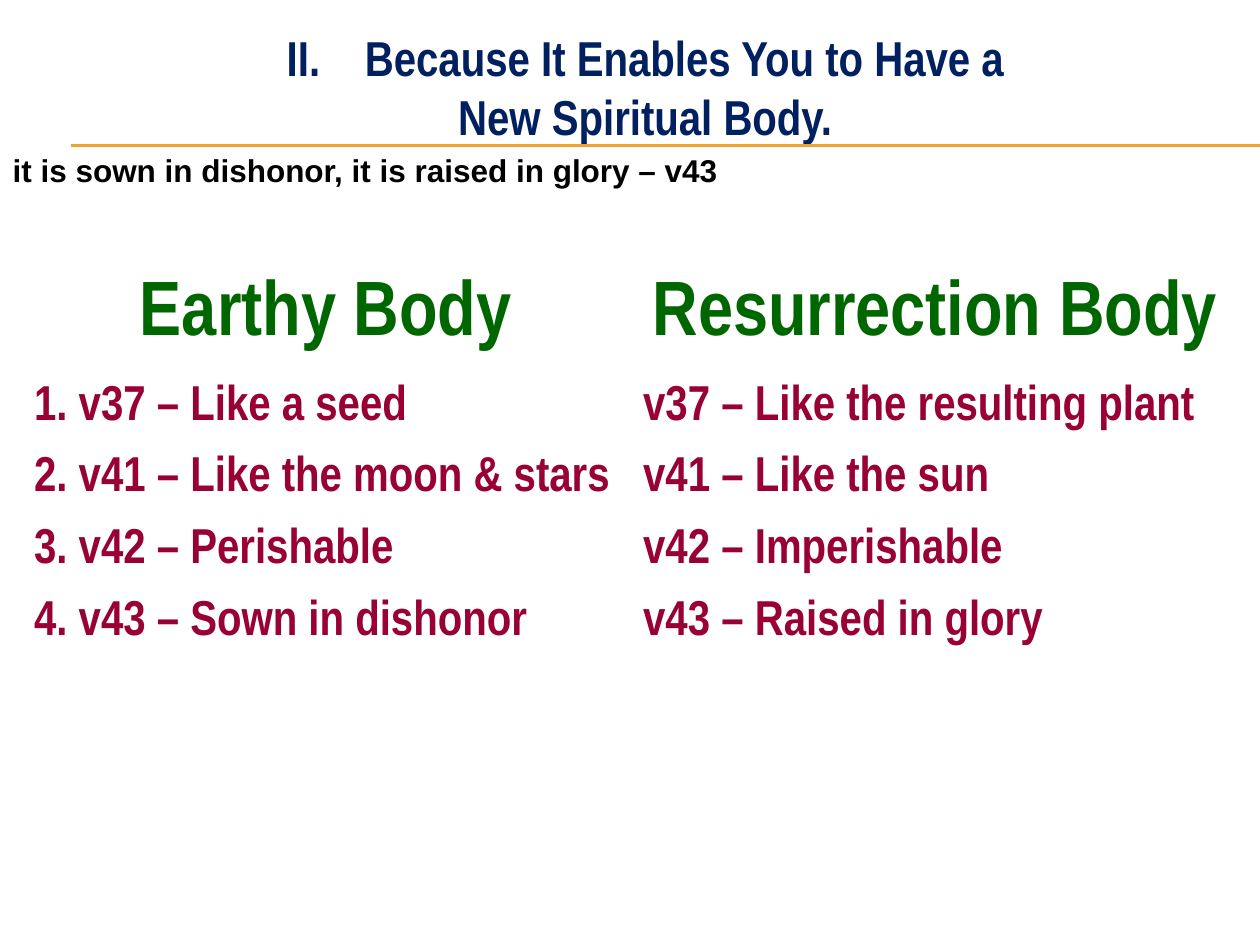
from lxml.etree import SubElement
from pptx import Presentation
from pptx.dml.color import RGBColor
from pptx.enum.shapes import MSO_CONNECTOR
from pptx.enum.text import MSO_ANCHOR, MSO_AUTO_SIZE, PP_ALIGN
from pptx.oxml.ns import qn
from pptx.util import Inches, Pt

COLORS = {"title": "002060", "head": "006600", "item": "990033",
          "verse": "000000", "rule": "F0A22E"}
WIDE, HIGH = 10, 7.5
NARROW = "Arial Narrow"
TITLE = ["Because It Enables You to Have a", "New Spiritual Body."]
VERSE = "it is sown in dishonor, it is raised in glory – v43"
BODIES = [
    ("Earthy Body", "Resurrection Body"),
    ("1. v37 – Like a seed", "v37 – Like the resulting plant"),
    ("2. v41 – Like the moon & stars", "v41 – Like the sun"),
    ("3. v42 – Perishable", "v42 – Imperishable"),
    ("4. v43 – Sown in dishonor", "v43 – Raised in glory"),
]


def style(para, size, color, align, font=NARROW):
    para.alignment = align
    for run in para.runs:
        run.font.size = Pt(size)
        run.font.name = font
        run.font.bold = True
        run.font.color.rgb = RGBColor.from_string(COLORS[color])


def add_rule(slide, top):
    line = slide.shapes.add_connector(
        MSO_CONNECTOR.STRAIGHT, Inches(0.56), Inches(top), Inches(WIDE), Inches(top))
    line.line.color.rgb = RGBColor.from_string(COLORS["rule"])
    line.line.width = Pt(0.75)
    SubElement(line._element.spPr, qn("a:effectLst"))


def set_title(slide):
    """Fill the title, with a hanging indent and a Roman number on its first line."""
    title = slide.shapes.title
    title.left, title.top = Inches(0.83), Inches(0.17)
    title.width, title.height = Inches(8.58), Inches(1.04)
    frame = title.text_frame
    frame.text = "\n".join(TITLE)
    frame.auto_size = MSO_AUTO_SIZE.NONE
    frame.vertical_anchor = MSO_ANCHOR.TOP
    for para in frame.paragraphs:
        props = para._p.get_or_add_pPr()
        props.set("marL", str(Inches(0.62)))
        props.set("indent", str(-Inches(0.62)))
        style(para, 28, "title", PP_ALIGN.CENTER)
    first = frame.paragraphs[0]._p.get_or_add_pPr()
    SubElement(first, qn("a:buAutoNum"), type="romanUcPeriod", startAt="2")


def add_grid(slide, rows, left, top, width, heights):
    """Add a table of equal columns without fills."""
    frame = slide.shapes.add_table(
        len(rows), len(rows[0]), Inches(left), Inches(top),
        Inches(width), Inches(sum(heights)))
    table = frame.table
    table.horz_banding = False
    for r, (row, height) in enumerate(zip(rows, heights)):
        table.rows[r].height = Inches(height)
        for c, text in enumerate(row):
            cell = table.cell(r, c)
            cell.fill.background()
            cell.text_frame.text = text
    return table


def add_bodies(slide):
    table = add_grid(slide, BODIES, 0.17, 2.17, WIDE - 0.33, [0.83] + [0.57] * 4)
    for r, row in enumerate(table.rows):
        look = (28, "item", PP_ALIGN.LEFT) if r else (44, "head", PP_ALIGN.CENTER)
        for cell in row.cells:
            style(cell.text_frame.paragraphs[0], *look)


def add_verse(slide):
    table = add_grid(slide, [[VERSE]], 0, 1.17, WIDE, [0.41])
    para = table.cell(0, 0).text_frame.paragraphs[0]
    style(para, 18, "verse", PP_ALIGN.JUSTIFY, "Arial")


def main():
    deck = Presentation()
    deck.slide_width, deck.slide_height = Inches(WIDE), Inches(HIGH)
    slide = deck.slides.add_slide(deck.slide_layouts[5])
    for top in (1.15, 1.16):
        add_rule(slide, top)
    add_bodies(slide)
    set_title(slide)
    add_verse(slide)
    deck.save("out.pptx")


if __name__ == "__main__":
    main()
